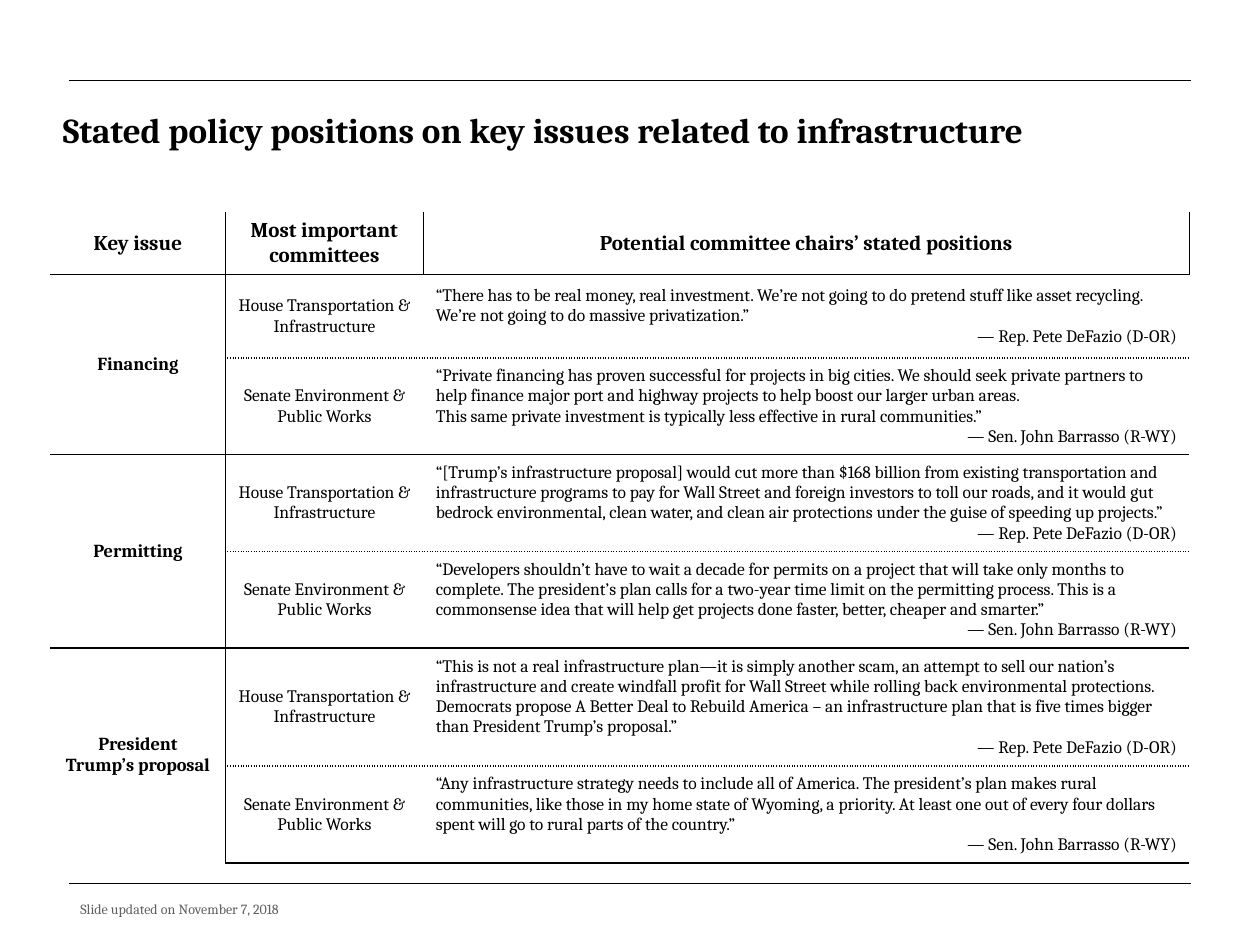
"""Build the slide on stated infrastructure policy positions."""
from dataclasses import dataclass

from lxml.etree import SubElement
from pptx import Presentation
from pptx.dml.color import RGBColor
from pptx.enum.shapes import MSO_CONNECTOR
from pptx.enum.text import MSO_ANCHOR, PP_ALIGN
from pptx.oxml.ns import qn
from pptx.slide import Slide
from pptx.table import Table, _Cell
from pptx.text.text import TextFrame
from pptx.util import Inches, Pt


@dataclass(frozen=True)
class Theme:
    font: str = "Cambria"
    ink: str = "000000"
    muted: str = "5F5F5F"
    title: float = 20
    header: float = 12
    issue: float = 10.5
    body: float = 10
    footer: float = 8
    rule: float = 0.5
    border: float = 1


@dataclass(frozen=True)
class Position:
    committee: str
    quote: tuple[str, ...]
    speaker: str


@dataclass(frozen=True)
class Issue:
    name: str
    house: tuple[str, ...]
    senate: tuple[str, ...]

    def positions(self) -> tuple[Position, Position]:
        return (
            Position("House Transportation & Infrastructure", self.house, "— Rep. Pete DeFazio (D-OR)"),
            Position("Senate Environment & Public Works", self.senate, "— Sen. John Barrasso (R-WY)"),
        )


THEME = Theme()
COLUMN_WIDTHS = (1.39, 1.57, 6.08)
ROW_HEIGHTS = (0.44, 0.66, 0.66, 0.49, 0.49, 0.49, 0.49)
HEADERS = ("Key issue", "Most important committees", "Potential committee chairs’ stated positions")
ISSUES = (
    Issue(
        "Financing",
        ("“There has to be real money, real investment. We’re not going to do pretend stuff like "
         "asset recycling. We’re not going to do massive privatization.”",),
        ("“Private financing has proven successful for projects in big cities. We should seek private "
         "partners to help finance major port and highway projects to help boost our larger urban areas.",
         "This same private investment is typically less effective in rural communities.”"),
    ),
    Issue(
        "Permitting",
        ("“[Trump’s infrastructure proposal] would cut more than $168 billion from existing "
         "transportation and infrastructure programs to pay for Wall Street and foreign investors to "
         "toll our roads, and it would gut bedrock environmental, clean water, and clean air "
         "protections under the guise of speeding up projects.”",),
        ("“Developers shouldn’t have to wait a decade for permits on a project that will take only "
         "months to complete. The president’s plan calls for a two-year time limit on the permitting "
         "process. This is a commonsense idea that will help get projects done faster, better, cheaper "
         "and smarter.”",),
    ),
    Issue(
        "President Trump’s proposal",
        ("“This is not a real infrastructure plan—it is simply another scam, an attempt to sell our "
         "nation’s infrastructure and create windfall profit for Wall Street while rolling back "
         "environmental protections. Democrats propose A Better Deal to Rebuild America – an "
         "infrastructure plan that is five times bigger than President Trump’s proposal.”",),
        ("“Any infrastructure strategy needs to include all of America. The president’s plan makes "
         "rural communities, like those in my home state of Wyoming, a priority. At least one out of "
         "every four dollars spent will go to rural parts of the country.”",),
    ),
)


def write(frame: TextFrame, *lines: str, size: float, bold: bool = False, color: str = THEME.ink,
          align: PP_ALIGN = PP_ALIGN.LEFT, last_align: PP_ALIGN | None = None,
          spacing: float | None = None) -> None:
    frame.word_wrap = True
    for index, line in enumerate(lines):
        paragraph = frame.add_paragraph() if index else frame.paragraphs[0]
        paragraph.alignment = align
        paragraph.line_spacing = spacing
        run = paragraph.add_run()
        run.text = line
        run.font.name = THEME.font
        run.font.size = Pt(size)
        run.font.bold = bold
        run.font.color.rgb = RGBColor.from_string(color)
    if last_align is not None:
        paragraph.alignment = last_align


def add_text_box(slide: Slide, left: float, top: float, width: float, height: float) -> TextFrame:
    return slide.shapes.add_textbox(Inches(left), Inches(top), Inches(width), Inches(height)).text_frame


def add_rule(slide: Slide, top: float) -> None:
    connector = slide.shapes.add_connector(
        MSO_CONNECTOR.STRAIGHT, Inches(0.55), Inches(top), Inches(9.45), Inches(top))
    connector.line.color.rgb = RGBColor.from_string(THEME.ink)
    connector.line.width = Pt(THEME.rule)
    SubElement(connector._element.spPr, qn("a:effectLst"))


def add_border(cell: _Cell, side: str, dash: str | None) -> None:
    properties = cell._tc.get_or_add_tcPr()
    line = SubElement(properties, qn(f"a:ln{side}"), w=str(Pt(THEME.border)))
    if dash is None:
        SubElement(line, qn("a:noFill"))
        return
    fill = SubElement(line, qn("a:solidFill"))
    SubElement(fill, qn("a:srgbClr"), val=THEME.ink)
    SubElement(line, qn("a:prstDash"), val=dash)


def horizontal_dash(row: int, column: int) -> str | None:
    """Give the dash below a row: solid after each issue, dotted between its committees."""
    if row < 0:
        return None
    if row % 2 == 0:
        return "solid"
    return "sysDot" if column else None


def vertical_dash(row: int, column: int) -> str | None:
    """Give the dash right of a column: full height after the first, header only after the rest."""
    return "solid" if column == 0 or (row == 0 and column > 0) else None


def format_cells(table: Table) -> None:
    for row in range(len(ROW_HEIGHTS)):
        for column in range(len(COLUMN_WIDTHS)):
            cell = table.cell(row, column)
            cell.vertical_anchor = MSO_ANCHOR.MIDDLE
            add_border(cell, "L", vertical_dash(row, column - 1))
            add_border(cell, "R", vertical_dash(row, column))
            add_border(cell, "T", horizontal_dash(row - 1, column))
            add_border(cell, "B", horizontal_dash(row, column))
            cell.fill.background()


def add_positions_table(slide: Slide) -> None:
    table = slide.shapes.add_table(
        len(ROW_HEIGHTS), len(COLUMN_WIDTHS), Inches(0.4), Inches(1.68),
        Inches(sum(COLUMN_WIDTHS)), Inches(sum(ROW_HEIGHTS))).table
    table.first_row = table.horz_banding = False
    for column, width in zip(table.columns, COLUMN_WIDTHS):
        column.width = Inches(width)
    for row, height in zip(table.rows, ROW_HEIGHTS):
        row.height = Inches(height)
    format_cells(table)
    for column, header in enumerate(HEADERS):
        write(table.cell(0, column).text_frame, header, size=THEME.header, bold=True, align=PP_ALIGN.CENTER)
    for number, issue in enumerate(ISSUES):
        first = 1 + 2 * number
        table.cell(first, 0).merge(table.cell(first + 1, 0))
        write(table.cell(first, 0).text_frame, issue.name, size=THEME.issue, bold=True, align=PP_ALIGN.CENTER)
        for row, position in enumerate(issue.positions(), first):
            write(table.cell(row, 1).text_frame, position.committee, size=THEME.body, align=PP_ALIGN.CENTER)
            write(table.cell(row, 2).text_frame, *position.quote, position.speaker,
                  size=THEME.body, last_align=PP_ALIGN.RIGHT)


def main() -> None:
    presentation = Presentation()
    presentation.slide_width, presentation.slide_height = Inches(10), Inches(7.5)
    slide = presentation.slides.add_slide(presentation.slide_layouts[6])
    for top in (7.01, 0.64):
        add_rule(slide, top)
    write(add_text_box(slide, 0.54, 7.1, 4.4, 0.24), "Slide updated on November 7, 2018",
          size=THEME.footer, color=THEME.muted)
    write(add_text_box(slide, 0.4, 0.85, 9.2, 0.7),
          "Stated policy positions on key issues related to infrastructure",
          size=THEME.title, bold=True, spacing=0.9)
    add_positions_table(slide)
    presentation.save("out.pptx")


if __name__ == "__main__":
    main()
